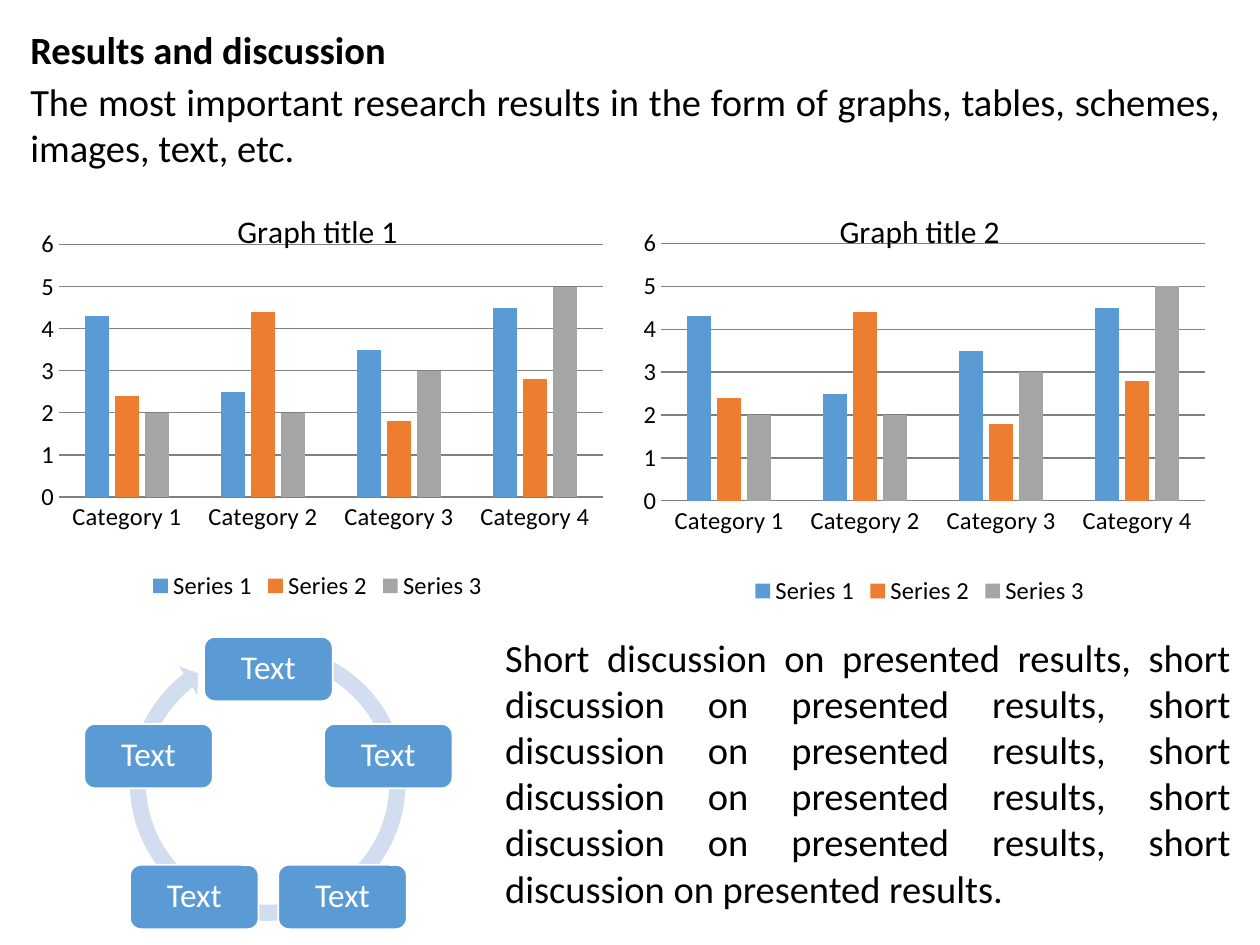
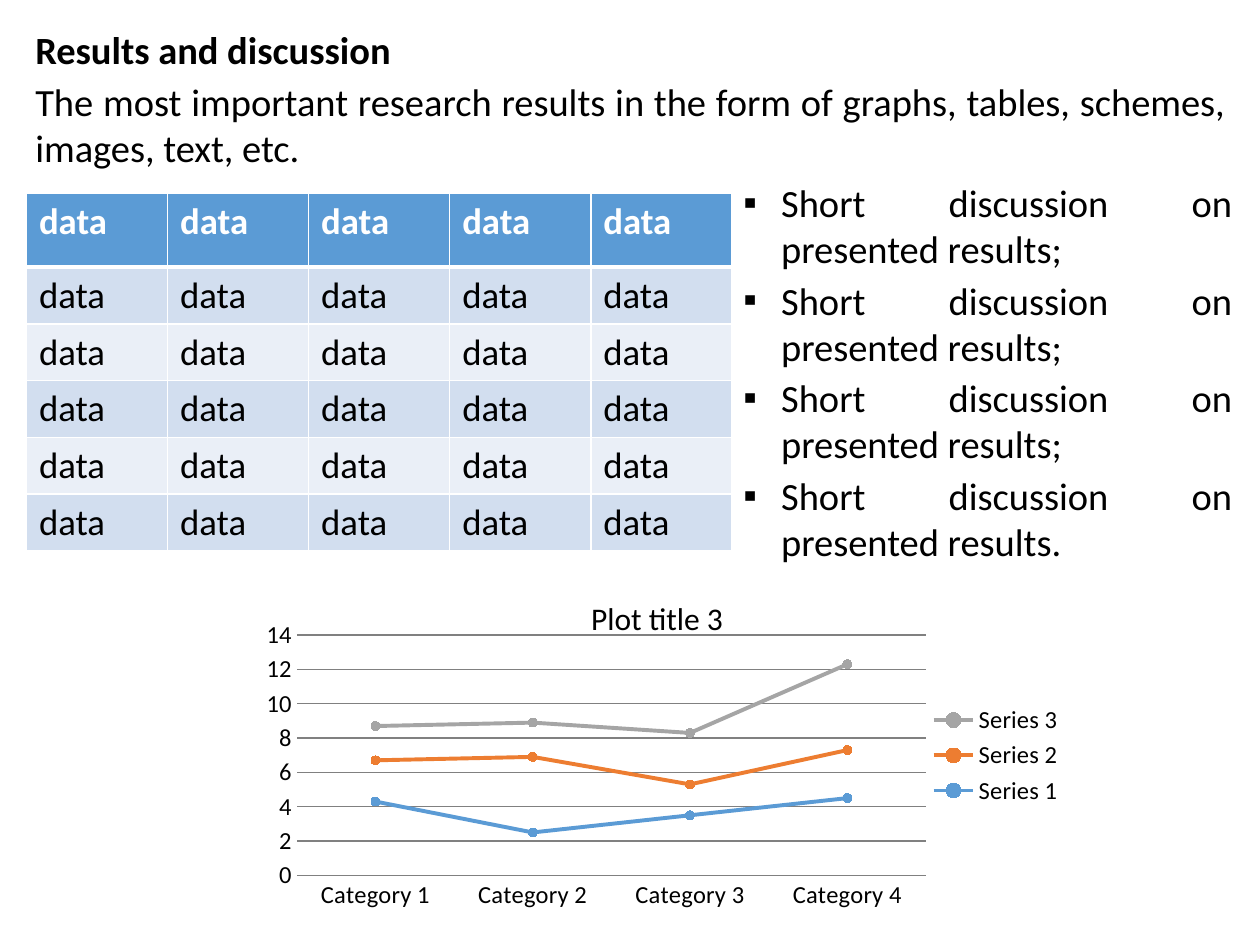
from math import cos, radians, sin

from lxml import etree
from pptx import Presentation
from pptx.chart.data import CategoryChartData
from pptx.dml.color import RGBColor
from pptx.enum.chart import XL_CHART_TYPE, XL_LEGEND_POSITION, XL_MARKER_STYLE, XL_TICK_MARK
from pptx.enum.shapes import MSO_SHAPE
from pptx.enum.text import MSO_ANCHOR, MSO_AUTO_SIZE, PP_ALIGN
from pptx.oxml.ns import qn
from pptx.util import Inches, Pt

COLUMNS = XL_CHART_TYPE.COLUMN_CLUSTERED
LINES = XL_CHART_TYPE.LINE_MARKERS_STACKED
BOTTOM, RIGHT = XL_LEGEND_POSITION.BOTTOM, XL_LEGEND_POSITION.RIGHT
CIRCLE = XL_MARKER_STYLE.CIRCLE
NO_TICK = XL_TICK_MARK.NONE
ROUNDED, CIRCULAR_ARROW = MSO_SHAPE.ROUNDED_RECTANGLE, MSO_SHAPE.CIRCULAR_ARROW
TOP, MIDDLE = MSO_ANCHOR.TOP, MSO_ANCHOR.MIDDLE
FIT_SHAPE = MSO_AUTO_SIZE.SHAPE_TO_FIT_TEXT
JUSTIFY, CENTER = PP_ALIGN.JUSTIFY, PP_ALIGN.CENTER

FONT = "Calibri"
BLACK, WHITE, GREY = "000000", "FFFFFF", "808080"
BLUE, PALE_BLUE, PALER_BLUE = "5B9BD5", "D2DEEF", "EAEFF7"
SERIES_COLORS = [BLUE, "ED7D31", "A5A5A5"]

HEADING = "Results and discussion"
INTRO = "The most important research results in the form of graphs, tables, schemes, images, text, etc."
CATEGORIES = [f"Category {number}" for number in range(1, 5)]
SERIES = {
    "Series 1": [4.3, 2.5, 3.5, 4.5],
    "Series 2": [2.4, 4.4, 1.8, 2.8],
    "Series 3": [2, 2, 3, 5],
}


def color(value):
    return RGBColor.from_string(value)


def inches(*lengths):
    return [Inches(length) for length in lengths]


def style_font(font, size, tint=BLACK, bold=False):
    font.name = FONT
    font.size = Pt(size)
    font.color.rgb = color(tint)
    font.bold = bold


def style_line(line, tint, width):
    line.color.rgb = color(tint)
    line.width = Pt(width)


class ResultsDeck:
    def __init__(self):
        self.deck = Presentation()
        self.deck.slide_width, self.deck.slide_height = inches(10, 7.5)
        self.page = None

    def add_page(self, intro_left):
        self.page = self.deck.slides.add_slide(self.deck.slide_layouts[1])
        title = self.page.shapes.title
        self.fill_placeholder(title, (intro_left, 0.16, 9.65, 1.25), [HEADING, INTRO], 3)
        title.text_frame.paragraphs[0].space_before = Pt(0)
        title.text_frame.paragraphs[0].font.bold = True

    def fill_placeholder(self, box, place, texts, space_before):
        box.left, box.top, box.width, box.height = inches(*place)
        frame = box.text_frame
        frame.word_wrap = True
        frame.vertical_anchor = TOP
        frame.auto_size = FIT_SHAPE
        frame.text = "\n".join(texts)
        for para in frame.paragraphs:
            para.alignment = JUSTIFY
            para.space_before = Pt(space_before)
            style_font(para.font, 22)

    def add_discussion(self, place, texts, space_before, bullet=None):
        body = self.page.placeholders[1]
        self.fill_placeholder(body, place, texts, space_before)
        indent = Inches(0.3) if bullet else 0
        for para in body.text_frame.paragraphs:
            properties = para._p.get_or_add_pPr()
            properties.set("marL", str(indent))
            properties.set("indent", str(-indent))
            if bullet:
                etree.SubElement(properties, qn("a:buFont")).set("typeface", "Arial")
                etree.SubElement(properties, qn("a:buChar")).set("char", bullet)
            else:
                etree.SubElement(properties, qn("a:buNone"))

    def add_chart(self, kind, place, title, plot_area, legend_position):
        data = CategoryChartData()
        data.categories = CATEGORIES
        for name, values in SERIES.items():
            data.add_series(name, values)
        chart = self.page.shapes.add_chart(kind, *inches(*place), data).chart
        style_font(chart.font, 10)
        chart.has_title = True
        chart.chart_title.include_in_layout = False
        chart.chart_title.text_frame.text = title
        style_font(chart.chart_title.text_frame.paragraphs[0].font, 18)
        chart.has_legend = True
        chart.legend.position = legend_position
        chart.legend.include_in_layout = False
        style_font(chart.legend.font, 14)
        for axis in (chart.category_axis, chart.value_axis):
            axis.major_tick_mark = axis.minor_tick_mark = NO_TICK
            style_font(axis.tick_labels.font, 14)
        style_line(chart.category_axis.format.line, GREY, 0.75)
        chart.value_axis.format.line.fill.background()
        chart.value_axis.has_major_gridlines = True
        style_line(chart.value_axis.major_gridlines.format.line, GREY, 0.75)
        self.place_plot(chart, plot_area)
        plot = chart.plots[0]
        plot.vary_by_categories = False
        if kind == COLUMNS:
            plot.gap_width, plot.overlap = 219, -27
        for series, tint in zip(plot.series, SERIES_COLORS):
            if kind == COLUMNS:
                self.fill(series.format, tint)
            else:
                self.style_curve(series, tint)

    def style_curve(self, series, tint):
        series.smooth = False
        style_line(series.format.line, tint, 2.25)
        series.marker.style = CIRCLE
        series.marker.size = 5
        self.fill(series.marker.format, tint)
        series.marker.format.line.color.rgb = color(tint)

    def place_plot(self, chart, plot_area):
        area = chart._chartSpace.chart.plotArea
        for old in area.findall(qn("c:layout")):
            area.remove(old)
        layout = etree.Element(qn("c:layout"))
        area.insert(0, layout)
        manual = etree.SubElement(layout, qn("c:manualLayout"))
        settings = [("layoutTarget", "inner"), ("xMode", "edge"), ("yMode", "edge")]
        settings += zip("xywh", plot_area)
        for name, value in settings:
            etree.SubElement(manual, qn(f"c:{name}")).set("val", str(value))

    def fill(self, target, tint):
        target.fill.solid()
        target.fill.fore_color.rgb = color(tint)

    def add_cycle(self, center_x, center_y, radius, labels):
        group = self.page.shapes.add_group_shape()
        arrow = group.shapes.add_shape(CIRCULAR_ARROW, *inches(0.96, 5.05, 2.33, 2.33))
        arrow.shadow.inherit = False
        for index, value in enumerate([0.055, 3.307, 139.299, 172.929, 0.058]):
            arrow.adjustments[index] = round(value, 3)
        self.fill(arrow, PALE_BLUE)
        arrow.line.fill.background()
        width, height = 1.02, 0.51
        for index, label in enumerate(labels):
            angle = radians(360 / len(labels) * index)
            left = center_x + radius * sin(angle) - width / 2
            top = center_y - radius * cos(angle) - height / 2
            box = group.shapes.add_shape(ROUNDED, *inches(left, top, width, height))
            box.shadow.inherit = False
            self.fill(box, BLUE)
            style_line(box.line, WHITE, 1)
            frame = box.text_frame
            frame.text = label
            frame.vertical_anchor = MIDDLE
            para = frame.paragraphs[0]
            para.alignment = CENTER
            para.line_spacing = 0.9
            style_font(para.font, 19, WHITE)

    def add_table(self, place, rows, header_height, row_height):
        table = self.page.shapes.add_table(len(rows), len(rows[0]), *inches(*place)).table
        for column in table.columns:
            column.width = Inches(place[2] / len(rows[0]))
        for row_number, texts in enumerate(rows):
            is_header = row_number == 0
            table.rows[row_number].height = Inches(header_height if is_header else row_height)
            band = BLUE if is_header else (PALER_BLUE, PALE_BLUE)[row_number % 2]
            borders = {"L": 1, "R": 1, "T": 3 if row_number == 1 else 1, "B": 3 if is_header else 1}
            for column_number, text in enumerate(texts):
                cell = table.cell(row_number, column_number)
                cell.text = text
                style_font(cell.text_frame.paragraphs[0].font, 21, WHITE if is_header else BLACK, is_header)
                self.fill(cell, band)
                self.set_borders(cell, borders)

    def set_borders(self, cell, borders):
        properties = cell._tc.get_or_add_tcPr()
        for index, (side, width) in enumerate(borders.items()):
            line = etree.Element(qn(f"a:ln{side}"), w=str(Pt(width)))
            solid = etree.SubElement(line, qn("a:solidFill"))
            etree.SubElement(solid, qn("a:srgbClr")).set("val", WHITE)
            properties.insert(index, line)


def main():
    results = ResultsDeck()

    results.add_page(0.14)
    results.add_chart(COLUMNS, (0.1, 1.5, 4.84, 3.31), "Graph title 1", (0.076, 0.133, 0.892, 0.606), BOTTOM)
    results.add_cycle(2.13, 6.31, 1, ["Text"] * 5)
    repeated = ", ".join(["hort discussion on presented results"] + ["short discussion on presented results"] * 5)
    results.add_discussion((3.91, 4.98, 5.96, 2.32), [f"S{repeated}."], 6)
    results.add_chart(COLUMNS, (4.88, 1.5, 4.84, 3.35), "Graph title 2", (0.076, 0.129, 0.892, 0.61), BOTTOM)

    results.add_page(0.18)
    results.add_chart(LINES, (1.89, 4.58, 6.65, 2.83), "Plot title 3", (0.07, 0.163, 0.751, 0.674), RIGHT)
    points = [f"Short discussion on presented results{end}" for end in ";;;."]
    results.add_discussion((5.8, 1.37, 4.08, 3.32), points, 3, "▪")
    results.add_table((0.21, 1.53, 5.6, 2.84), [["data"] * 5] * 6, 0.59, 0.45)

    results.deck.save("out.pptx")


if __name__ == "__main__":
    main()
